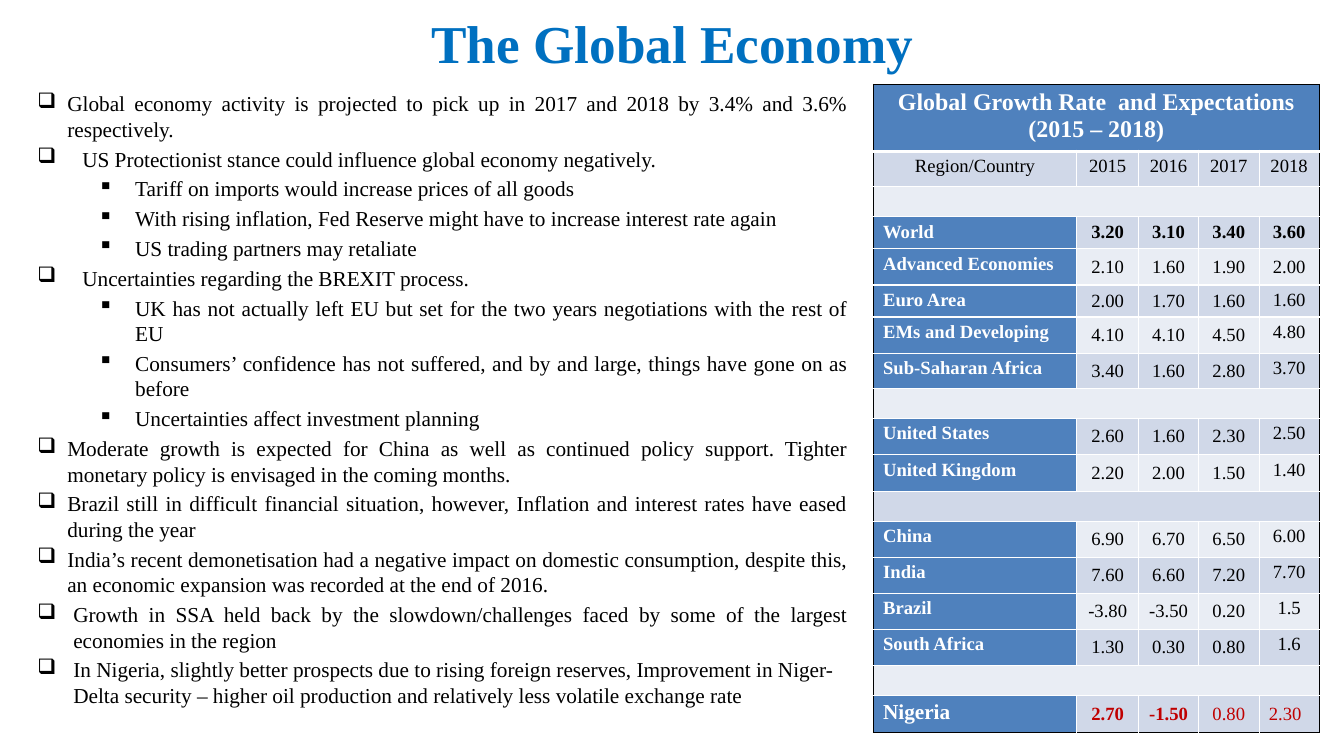
from pptx import Presentation
from pptx import util as u
from pptx.dml import color as c
from pptx.enum import text as t
from pptx.oxml import ns, xmlchemy as x

Pt = u.Pt
FONT = "Times New Roman"
TITLE_BLUE = c.RGBColor(0x00, 0x70, 0xC0)
HEAD_BLUE = c.RGBColor(0x4F, 0x81, 0xBD)
DARK_BAND = c.RGBColor(0xD0, 0xD8, 0xE8)
LIGHT_BAND = c.RGBColor(0xE9, 0xED, 0xF4)
RED = c.RGBColor(0xC0, 0x00, 0x00)
BLACK = c.RGBColor(0x00, 0x00, 0x00)
WHITE = c.RGBColor(0xFF, 0xFF, 0xFF)

CENTER, LEFT, JUSTIFY = t.PP_ALIGN.CENTER, t.PP_ALIGN.LEFT, t.PP_ALIGN.JUSTIFY
TOP, MIDDLE = t.MSO_ANCHOR.TOP, t.MSO_ANCHOR.MIDDLE

# Paragraph style: bullet, left margin, hanging indent (points)
BULLETS = {
    "point": ("❑", 22.5, 22.5),
    "topic": ("❑", 33.75, 33.75),
    "region": ("❑", 27, 27),
    "detail": ("▪", 73.5, 28),
}
OUTLOOK = [
    ("point", "Global economy activity is projected to pick up in 2017 and 2018 by 3.4% and 3.6% respectively."),
    ("topic", "US Protectionist stance could influence global economy negatively."),
    ("detail", "Tariff on imports would increase prices of all goods"),
    ("detail", "With rising inflation, Fed Reserve might have to increase interest rate again"),
    ("detail", "US trading partners may retaliate"),
    ("topic", "Uncertainties regarding the BREXIT process."),
    ("detail", "UK has not actually left EU but set for the two years negotiations with the rest of EU"),
    ("detail", "Consumers’ confidence has not suffered, and by and large, things have gone on as before"),
    ("detail", "Uncertainties affect investment planning"),
    ("point", "Moderate growth is expected for China as well as continued policy support. "
              "Tighter monetary policy is envisaged in the coming months."),
    ("point", "Brazil still in difficult financial situation, however, Inflation and interest rates "
              "have eased during the year"),
    ("point", "India’s recent demonetisation had a negative impact on domestic consumption, despite this, "
              "an economic expansion was recorded at the end of 2016."),
    ("region", "Growth in SSA held back by the slowdown/challenges faced by some of the largest "
               "economies in the region"),
    ("region", "In Nigeria, slightly better prospects due to rising foreign reserves, Improvement in "
               "Niger-Delta security – higher oil production and relatively less volatile exchange rate"),
]

COLUMN_WIDTHS = [152.7, 46.7, 44.8, 45.8, 45]
SPACER = (22.7, "", "")
# Row height, label, values for 2015 to 2018
GROWTH_ROWS = [
    (47.2, "Global Growth Rate  and Expectations (2015 – 2018)", ""),
    (26.3, "Region/Country", "2015 2016 2017 2018"),
    SPACER,
    (22.7, "World", "3.20 3.10 3.40 3.60"),
    (27.3, "Advanced Economies", "2.10 1.60 1.90 2.00"),
    (22.7, "Euro Area", "2.00 1.70 1.60 1.60"),
    (27.3, "EMs and Developing", "4.10 4.10 4.50 4.80"),
    (26.3, "Sub-Saharan Africa", "3.40 1.60 2.80 3.70"),
    SPACER,
    (27.3, "United States", "2.60 1.60 2.30 2.50"),
    (27.3, "United Kingdom", "2.20 2.00 1.50 1.40"),
    SPACER,
    (27.1, "China", "6.90 6.70 6.50 6.00"),
    (27.1, "India", "7.60 6.60 7.20 7.70"),
    (27.1, "Brazil", "-3.80 -3.50 0.20 1.5"),
    (27.1, "South Africa", "1.30 0.30 0.80 1.6"),
    SPACER,
    (27.5, "Nigeria", "2.70 -1.50 0.80 2.30"),
]


def format_para(para, size, color, bold=False, align=LEFT):
    para.alignment = align
    for span in para.runs:
        span.font.name = FONT
        span.font.size = Pt(size)
        span.font.bold = bold
        span.font.color.rgb = color


def add_box(page, left, top, width, height, anchor):
    box = page.shapes.add_textbox(Pt(left), Pt(top), Pt(width), Pt(height))
    frame = box.text_frame
    frame.word_wrap = True
    frame.vertical_anchor = anchor
    frame.margin_left = frame.margin_right = Pt(9.4)
    frame.margin_top = frame.margin_bottom = Pt(4.6)
    return frame


def add_title(page):
    para = add_box(page, 88.5, 0, 833.5, 63, MIDDLE).paragraphs[0]
    para.text = "The Global Economy"
    format_para(para, 40, TITLE_BLUE, True, CENTER)


def add_bullet(para, style):
    mark, margin, hanging = BULLETS[style]
    props = para._p.get_or_add_pPr()
    props.set("marL", str(Pt(margin)))
    props.set("indent", str(-Pt(hanging)))
    x.OxmlElement("a:buChar")
    bullet = props.makeelement(ns.qn("a:buChar"), {"char": mark})
    props.append(bullet)


def add_outlook(page):
    frame = add_box(page, 18.7, 63.4, 627.8, 491.8, TOP)
    for number, (style, words) in enumerate(OUTLOOK):
        para = frame.add_paragraph() if number else frame.paragraphs[0]
        para.text = words
        para.space_before = Pt(3.2)
        last = number == len(OUTLOOK) - 1
        format_para(para, 16, BLACK, align=LEFT if last else JUSTIFY)
        add_bullet(para, style)


def set_border(cell, side, color, width=1):
    """Draw one side (L, R, T or B); call before the cell is filled."""
    line = x.OxmlElement("a:ln" + side)
    line.set("w", str(Pt(width)))
    fill = x.OxmlElement("a:solidFill")
    tint = x.OxmlElement("a:srgbClr")
    tint.set("val", str(color))
    fill.append(tint)
    line.append(fill)
    cell._tc.get_or_add_tcPr().append(line)


def frame_cell(cell, row, column, spans):
    """Black on the outside of the table, white inside."""
    last_row, last_column = len(GROWTH_ROWS) - 1, len(COLUMN_WIDTHS) - 1
    set_border(cell, "L", BLACK if column == 0 else WHITE)
    set_border(cell, "R", BLACK if spans or column == last_column else WHITE)
    set_border(cell, "T", BLACK if row == 0 else WHITE)
    set_border(cell, "B", BLACK if row == last_row else WHITE, 3 if row == 0 else 1)


def set_margins(cell, side, end):
    cell.margin_left = cell.margin_right = Pt(side)
    cell.margin_top = cell.margin_bottom = Pt(end)


def write_cell(cell, row, column, words):
    label = GROWTH_ROWS[row][1]
    nigeria = label == "Nigeria"
    cell.text = words
    size, color, align = 14, BLACK, CENTER
    bold = label == "World"
    if row == 0:
        size, color, bold = 18, WHITE, True
    elif column == 0 and row > 1:
        size, color, bold, align = 16 if nigeria else 14, WHITE, True, LEFT
    elif nigeria:
        color, bold = RED, column < 3
        align = LEFT if column == 4 else CENTER
    format_para(cell.text_frame.paragraphs[0], size, color, bold, align)

    measured = row > 3 and column > 0
    centred = column < 4 or label in ("Advanced Economies", "Nigeria")
    cell.vertical_anchor = MIDDLE if measured and centred else TOP
    if not words:
        set_margins(cell, 0, 0)
    elif measured and centred and not (nigeria and column == 4):
        set_margins(cell, 5.8, 0)
    else:
        set_margins(cell, 7.2, 3.6)


def add_growth_table(page):
    height = sum(row[0] for row in GROWTH_ROWS)
    table = page.shapes.add_table(len(GROWTH_ROWS), len(COLUMN_WIDTHS), Pt(656.6), Pt(63.4),
                                  Pt(sum(COLUMN_WIDTHS)), Pt(height)).table
    table.first_row = table.horz_banding = False
    for column, width in enumerate(COLUMN_WIDTHS):
        table.columns[column].width = Pt(width)
    for row, (height, label, values) in enumerate(GROWTH_ROWS):
        table.rows[row].height = Pt(height)
        spans = not values
        if spans:
            table.cell(row, 0).merge(table.cell(row, len(COLUMN_WIDTHS) - 1))
        entries = [label] + (values.split() or [""] * 4)
        band = DARK_BAND if row % 2 else LIGHT_BAND
        for column, words in enumerate(entries):
            cell = table.cell(row, column)
            frame_cell(cell, row, column, spans)
            heading = row == 0 or (column == 0 and row > 1 and label)
            cell.fill.solid()
            cell.fill.fore_color.rgb = HEAD_BLUE if heading else band
            write_cell(cell, row, column, words)


def main():
    deck = Presentation()
    deck.slide_width, deck.slide_height = Pt(1010.2), Pt(568.1)
    page = deck.slides.add_slide(deck.slide_layouts[6])
    add_title(page)
    add_outlook(page)
    add_growth_table(page)
    deck.save("out.pptx")


if __name__ == "__main__":
    main()
